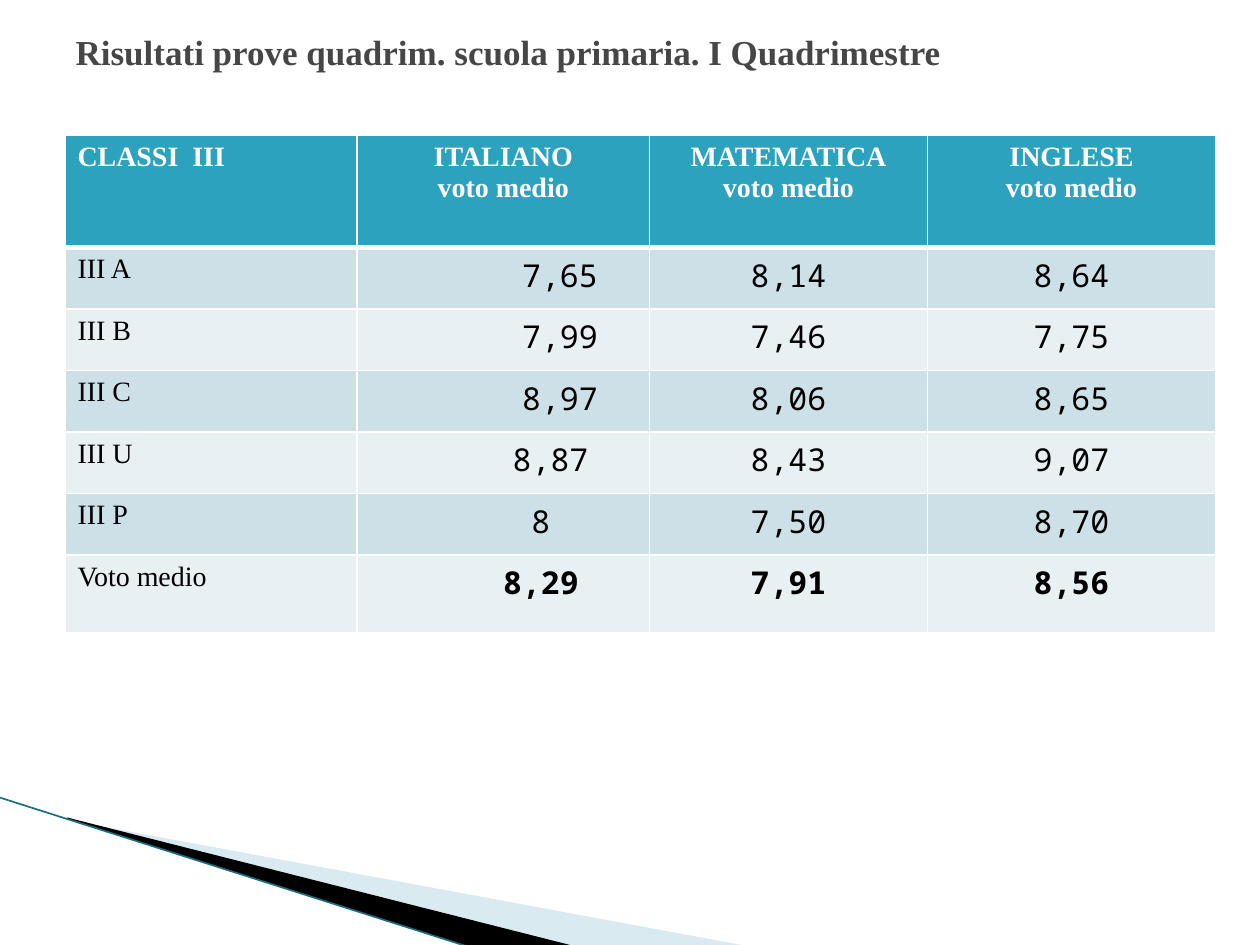
import lxml.etree
import pptx
import pptx.dml.color
import pptx.enum.shapes
import pptx.enum.text
import pptx.oxml.ns
import pptx.util

Cm = pptx.util.Cm
Pt = pptx.util.Pt
ALIGN = pptx.enum.text.PP_ALIGN
qn = pptx.oxml.ns.qn

SERIF = "Times New Roman"
MONO = "Noto Sans Mono"
TITLE_FONT = {"name": SERIF, "size": Pt(20), "bold": True}
HEADER_FONT = {"name": SERIF, "size": Pt(16), "bold": True}
CLASS_FONT = {"name": SERIF, "size": Pt(16), "bold": False}
GRADE_FONT = {"name": MONO, "size": Pt(18), "bold": False}
AVERAGE_FONT = {"name": MONO, "size": Pt(18), "bold": True}

HEADERS = ["CLASSI  III", "ITALIANO\nvoto medio", "MATEMATICA\nvoto medio", "INGLESE\nvoto medio"]
GRADES = [
    ["III A", "7,65", "8,14", "8,64"],
    ["III B", "7,99", "7,46", "7,75"],
    ["III C", "8,97", "8,06", "8,65"],
    ["III U", "8,87", "8,43", "9,07"],
    ["III P", "8", "7,50", "8,70"],
    ["Voto medio", "8,29", "7,91", "8,56"],
]
ITALIAN_INDENTS = [2.29, 2.29, 2.29, 1.91, 1.52, 1.52]
COLUMN_WIDTHS = [5.89, 5.89, 5.61, 5.8]
ROW_HEIGHTS = [2.26] + [1.24] * 5 + [1.57]


def rgb(value):
    """Return the colour for a hex string."""
    return pptx.dml.color.RGBColor.from_string(value)


def apply_format(target, values):
    """Set every attribute in a dict of format values."""
    for name, value in values.items():
        setattr(target, name, value)


def write_text(frame, text, font, color, align):
    """Write one paragraph per line in a single format."""
    frame.text = text
    for paragraph in frame.paragraphs:
        paragraph.alignment = align
        apply_format(paragraph.font, font)
        paragraph.font.color.rgb = rgb(color)


def set_borders(cell, widths):
    """Draw white borders of the given point widths on a cell."""
    properties = cell._tc.get_or_add_tcPr()
    for position, (side, width) in enumerate(widths.items()):
        line = lxml.etree.Element(qn("a:ln" + side), w=str(Pt(width)))
        fill = lxml.etree.SubElement(line, qn("a:solidFill"))
        lxml.etree.SubElement(fill, qn("a:srgbClr"), val="FFFFFF")
        properties.insert(position, line)


def add_title(slide, left, top, width, height):
    """Place and format the title placeholder."""
    title = slide.shapes.title
    apply_format(title, {"left": Cm(left), "top": Cm(top), "width": Cm(width), "height": Cm(height)})
    title.text_frame.vertical_anchor = pptx.enum.text.MSO_ANCHOR.MIDDLE
    write_text(title.text_frame, "Risultati prove quadrim. scuola primaria. I Quadrimestre",
               TITLE_FONT, "464646", ALIGN.LEFT)


def add_wedge(slide, left, top, points, color, opacity):
    """Draw a filled outline from points relative to a corner."""
    corners = [(Cm(left + x), Cm(top + y)) for x, y in points]
    builder = slide.shapes.build_freeform(*corners[0], scale=1.0)
    builder.add_line_segments(corners[1:], close=True)
    wedge = builder.convert_to_shape()
    wedge.shadow.inherit = False
    wedge.fill.solid()
    wedge.fill.fore_color.rgb = rgb(color)
    wedge.line.fill.background()
    if opacity < 100:
        tint = wedge._element.spPr.find(".//" + qn("a:srgbClr"))
        lxml.etree.SubElement(tint, qn("a:alpha"), val=str(opacity * 1000))


def add_corner_decoration(slide, left, top, width, height):
    """Draw the two wedges and the edge line of the lower left corner."""
    add_wedge(slide, left, top, [(1.4, 0.46), (width, height), (11.58, height), (1.4, 0.43)], "A0CBDC", 40)
    add_wedge(slide, left, top, [(1.35, 0.4), (11.61, height), (9.45, height), (1.37, 0.43)], "000000", 100)
    edge = slide.shapes.add_connector(pptx.enum.shapes.MSO_CONNECTOR.STRAIGHT,
                                      Cm(left), Cm(top), Cm(left + 9.42), Cm(top + height))
    edge.line.width = Pt(0.95)
    edge.line.color.rgb = rgb("1A6E84")
    lxml.etree.SubElement(edge._element.spPr, qn("a:effectLst"))


def cell_format(row, column):
    """Return the font, text colour and fill of a table cell."""
    if row == 0:
        return HEADER_FONT, "FFFFFF", "2DA2BF"
    fill = "CDE0E8" if row % 2 else "E8F0F4"
    if column == 0:
        return CLASS_FONT, "000000", fill
    return (AVERAGE_FONT if row == len(GRADES) else GRADE_FONT), "000000", fill


def add_grades_table(slide, left, top, width, height):
    """Build the table of average grades by class and subject."""
    rows = [HEADERS] + GRADES
    table = slide.shapes.add_table(len(rows), len(HEADERS), Cm(left), Cm(top), Cm(width), Cm(height)).table
    for column, column_width in zip(table.columns, COLUMN_WIDTHS):
        column.width = Cm(column_width)
    for row, row_height in zip(table.rows, ROW_HEIGHTS):
        row.height = Cm(row_height)
    for r, texts in enumerate(rows):
        for c, text in enumerate(texts):
            cell = table.cell(r, c)
            font, color, fill = cell_format(r, c)
            write_text(cell.text_frame, text, font, color, ALIGN.CENTER if c else ALIGN.LEFT)
            cell.fill.solid()
            cell.fill.fore_color.rgb = rgb(fill)
            set_borders(cell, {"L": 1, "R": 1, "T": 3 if r == 1 else 1, "B": 3 if r == 0 else 1})
    for r, indent in enumerate(ITALIAN_INDENTS, start=1):
        table.cell(r, 1).margin_left = Cm(0.25 + indent)


def main():
    """Build the slide and save it."""
    presentation = pptx.Presentation()
    presentation.slide_width = Cm(25.4)
    presentation.slide_height = Cm(19.05)
    slide = presentation.slides.add_slide(presentation.slide_layouts[5])
    add_corner_decoration(slide, 0, 16.08, 15.11, 3)
    add_grades_table(slide, 1.31, 2.73, sum(COLUMN_WIDTHS), sum(ROW_HEIGHTS))
    add_title(slide, 1.27, -1.27, 22.86, 4.6)
    presentation.save("out.pptx")


if __name__ == "__main__":
    main()
